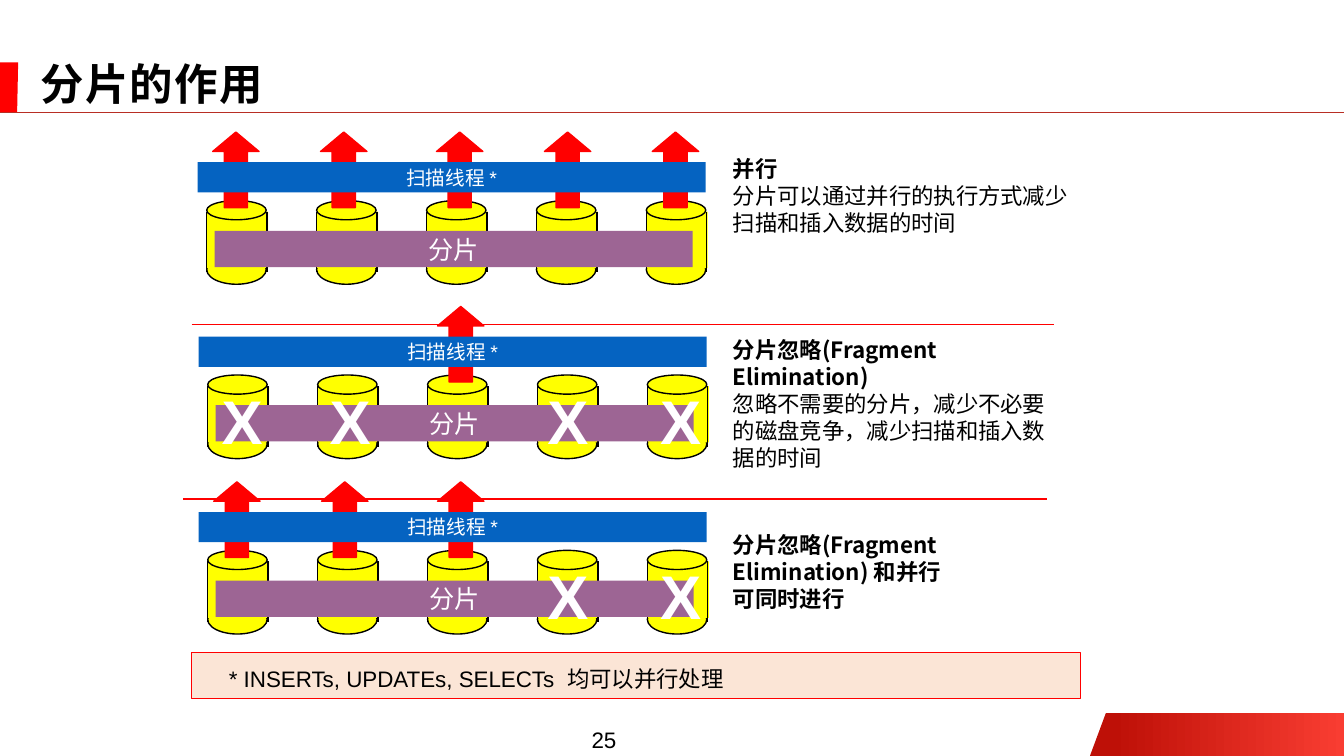
from lxml.etree import SubElement
from pptx import Presentation
from pptx.dml.color import RGBColor
from pptx.enum.shapes import MSO_CONNECTOR, MSO_SHAPE
from pptx.enum.text import MSO_ANCHOR, MSO_AUTO_SIZE, PP_ALIGN
from pptx.oxml.ns import qn
from pptx.util import Inches, Pt

COLORS = {
    "red": "FF0000", "rule": "B82E24", "dark_red": "BE1007", "light_red": "F93D32",
    "yellow": "FFFF00", "blue": "0563C1", "purple": "9D6594", "peach": "FBE5D6",
    "black": "000000", "white": "FFFFFF",
}
LATIN_FONT = "Arial"
CHINESE_FONT = "Noto Sans CJK SC"

CYLINDER_LEFT, CYLINDER_STEP = 2.05, 1.09
ARROW_LEFTS = [2.11, 3.18, 4.33, 5.40, 6.47]
CROSS_LEFTS = [2.10, 3.17, 4.24, 5.33, 6.45]

# Each row: shift right and down, fragments scanned, fragments crossed out
ROWS = [
    (0, 0, [0, 1, 2, 3, 4], []),
    (0.01, 1.73, [2], [0, 1, 3, 4]),
    (0.01, 3.47, [0, 1, 2], [3, 4]),
]

# Each note: place and size, bold heading, plain text
NOTES = [
    ((7.17, 1.49, 3.67, 0.91), "并行", "分片可以通过并行的执行方式减少扫描和插入数据的时间"),
    ((7.17, 3.29, 3.36, 1.45), "分片忽略(Fragment Elimination)",
     "忽略不需要的分片，减少不必要的磁盘竞争，减少扫描和插入数据的时间"),
    ((7.17, 5.22, 3.28, 0.91), "分片忽略(Fragment Elimination) 和并行\v可同时进行", None),
]


def color(name):
    return RGBColor.from_string(COLORS[name])


class SlideBuilder:
    def __init__(self, page):
        self.page = page

    def style_span(self, span, size, name="black", bold=False, font=LATIN_FONT):
        span.font.size = Pt(size)
        span.font.bold = bold
        span.font.name = font
        span.font.color.rgb = color(name)
        SubElement(span.font._element, qn("a:ea"), typeface=CHINESE_FONT)

    def title(self, text, place):
        box = self.page.shapes.title
        box.left, box.top, box.width, box.height = map(Inches, place)
        frame = box.text_frame
        frame.text = text
        frame.auto_size = MSO_AUTO_SIZE.NONE
        frame.vertical_anchor = MSO_ANCHOR.MIDDLE
        para = frame.paragraphs[0]
        para.alignment = PP_ALIGN.LEFT
        para.line_spacing = 0.9
        para.space_before = Pt(0)
        self.style_span(para.runs[0], 31, bold=True, font=CHINESE_FONT)
        para.runs[0].font._element.set("spc", "100")

    def shape(self, kind, place, fill, line=None, width=1, parent=None):
        shapes = (parent or self.page).shapes
        box = shapes.add_shape(kind, *map(Inches, place))
        self.paint(box, fill, line, width)
        return box

    def paint(self, box, fill, line=None, width=1):
        box.shadow.inherit = False
        box.fill.solid()
        box.fill.fore_color.rgb = color(fill)
        if line:
            box.line.color.rgb = color(line)
            box.line.width = Pt(width)
        else:
            box.line.fill.background()

    def outline(self, points, fill):
        corners = [(Inches(x), Inches(y)) for x, y in points]
        builder = self.page.shapes.build_freeform(*corners[0], scale=1.0)
        builder.add_line_segments(corners[1:], close=True)
        box = builder.convert_to_shape()
        self.paint(box, fill)
        return box

    def line(self, start, end, name, width=1, parent=None):
        shapes = (parent or self.page).shapes
        link = shapes.add_connector(MSO_CONNECTOR.STRAIGHT, *map(Inches, start + end))
        link.line.color.rgb = color(name)
        link.line.width = Pt(width)
        SubElement(link._element.spPr, qn("a:effectLst"))

    def label(self, box, text, size, name="black", bold=False, align=PP_ALIGN.CENTER):
        frame = box.text_frame
        frame.text = text
        frame.vertical_anchor = MSO_ANCHOR.MIDDLE
        para = frame.paragraphs[0]
        para.alignment = align
        self.style_span(para.runs[0], size, name, bold)

    def text_box(self, place, wrap=False):
        box = self.page.shapes.add_textbox(*map(Inches, place))
        box.text_frame.word_wrap = wrap
        return box

    def note(self, place, heading, body):
        frame = self.text_box(place, wrap=True).text_frame
        para = frame.paragraphs[0]
        para.text = f"{heading}\v{body}" if body else heading
        para.line_spacing = Pt(19.2)
        for index, span in enumerate(para.runs):
            bold = body is None or index == 0
            self.style_span(span, 16, bold=bold, font=CHINESE_FONT)

    def cylinder(self, left, top):
        group = self.page.shapes.add_group_shape()
        self.shape(MSO_SHAPE.OVAL, (left, top + 0.54, 0.59, 0.29), "yellow", "black", parent=group)
        self.shape(MSO_SHAPE.RECTANGLE, (left, top + 0.11, 0.61, 0.56), "yellow", parent=group)
        self.shape(MSO_SHAPE.OVAL, (left, top, 0.59, 0.19), "yellow", "black", parent=group)
        for side in (left, left + 0.6):
            self.line((side, top + 0.11), (side, top + 0.71), "black", parent=group)

    def row(self, right, down, scanned, crossed):
        for index in range(len(ARROW_LEFTS)):
            self.cylinder(CYLINDER_LEFT + right + index * CYLINDER_STEP, 1.99 + down)
        for index in scanned:
            arrow = self.shape(MSO_SHAPE.UP_ARROW,
                               (ARROW_LEFTS[index] + right, 1.31 + down, 0.46, 0.75), "red", "red")
            arrow.adjustments[0], arrow.adjustments[1] = 0.5, 0.42
        threads = self.shape(MSO_SHAPE.RECTANGLE, (1.96 + right, 1.61 + down, 5.04, 0.3), "blue")
        self.label(threads, "扫描线程 *", 14, "white")
        fragments = self.shape(MSO_SHAPE.RECTANGLE, (2.13 + right, 2.29 + down, 4.74, 0.36), "purple")
        self.label(fragments, "分片", 18, "white")
        for index in crossed:
            cross = self.text_box((CROSS_LEFTS[index], 2.06 + down, 0.56, 0.75))
            self.label(cross, "X", 44, "white", bold=True)


def main():
    deck = Presentation()
    deck.slide_width, deck.slide_height = Inches(13.33), Inches(7.5)
    slide = SlideBuilder(deck.slides.add_slide(deck.slide_layouts[5]))

    # Page frame and title
    corner = slide.outline([(10.81, 7.5), (10.97, 7.07), (13.33, 7.07), (13.33, 7.5)], "red")
    corner.fill.gradient()
    corner.fill.gradient_angle = 0
    stops = corner.fill.gradient_stops
    for stop, position, name in zip(stops, (0.09, 1), ("dark_red", "light_red")):
        stop.position = position
        stop.color.rgb = color(name)
    slide.outline([(0, 0.62), (0.18, 0.62), (0.17, 1.12), (0, 1.12)], "red")
    slide.line((0, 1.11), (13.33, 1.11), "rule", 0.5)
    slide.title("分片的作用", (0.3, 0.59, 12.26, 0.53))
    number = slide.text_box((5.75, 7.15, 0.48, 0.37))
    slide.label(number, "25", 16)
    number.text_frame.vertical_anchor = MSO_ANCHOR.BOTTOM

    # Three scanning cases with their explanations
    for case in ROWS:
        slide.row(*case)
    for note in NOTES:
        slide.note(*note)

    # Separators between the cases
    slide.line((1.9, 3.22), (10.45, 3.22), "red")
    slide.line((1.82, 4.95), (10.38, 4.95), "red")

    # Footnote
    footnote = slide.shape(MSO_SHAPE.RECTANGLE, (1.9, 6.47, 8.81, 0.46), "peach", "red", 0.25)
    slide.label(footnote, "* INSERTs, UPDATEs, SELECTs  均可以并行处理", 16, align=PP_ALIGN.LEFT)
    frame = footnote.text_frame
    frame.margin_left, frame.margin_top = Inches(0.37), Inches(0.06)
    frame.margin_right = frame.margin_bottom = 0

    deck.save("out.pptx")


if __name__ == "__main__":
    main()
